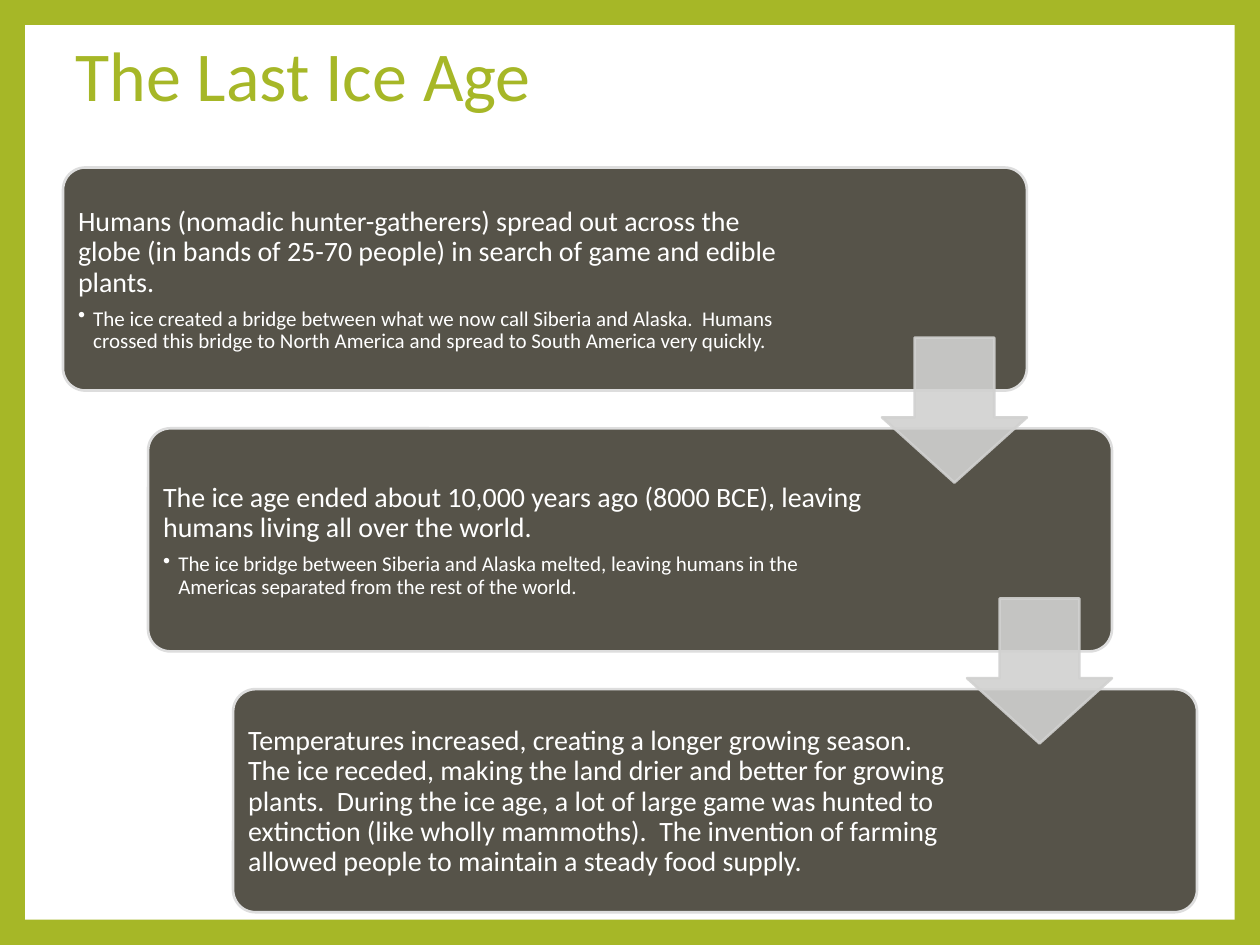
from pptx import Presentation
from pptx.dml.color import RGBColor
from pptx.enum.shapes import MSO_SHAPE as Form
from pptx.enum.text import MSO_ANCHOR as Anchor, PP_ALIGN as Align
from pptx.oxml.ns import qn
from pptx.util import Inches, Pt
from lxml.etree import SubElement

WIDE, HIGH = 10, 7.5
GREEN, WHITE, DARK, PALE, GREY = "A6B727", "FFFFFF", "565349", "DDDDDD", "D1D1D0"
LEFT, TOP = 0.5, 1.33
STEP, DROP = 0.675, 2.07
CARD_W, CARD_H, ARROW = 7.65, 1.77, 1.15

STAGES = [
    ("Humans (nomadic hunter-gatherers) spread out across the globe (in bands of 25-70 people) in search of game and edible plants.",
     "The ice created a bridge between what we now call Siberia and Alaska.  Humans crossed this bridge to North America and spread to South America very quickly."),
    ("The ice age ended about 10,000 years ago (8000 BCE), leaving humans living all over the world.",
     "The ice bridge between Siberia and Alaska melted, leaving humans in the Americas separated from the rest of the world."),
    ("Temperatures increased, creating a longer growing season.  The ice receded, making the land drier and better for growing plants.  During the ice age, a lot of large game was hunted to extinction (like wholly mammoths).  The invention of farming allowed people to maintain a steady food supply.",),
]


def paint(fill, color, alpha=None):
    fill.solid()
    fill.fore_color.rgb = RGBColor.from_string(color)
    if alpha:
        for tone in fill._xPr.iter(qn("a:srgbClr")):
            SubElement(tone, qn("a:alpha")).set("val", str(alpha * 1000))


def add_form(slide, form, box, color, edge=None, adjust=(), alpha=None):
    shape = slide.shapes.add_shape(form, *map(Inches, box))
    shape.shadow.inherit = False
    for i, value in enumerate(adjust):
        shape.adjustments[i] = value
    paint(shape.fill, color, alpha)
    if edge:
        shape.line.width = Pt(1.5)
        paint(shape.line.fill, edge, alpha)
    else:
        shape.line.fill.background()


def add_frame(slide, box, inset):
    frame = slide.shapes.add_textbox(*map(Inches, box)).text_frame
    frame.word_wrap = True
    frame.vertical_anchor = Anchor.MIDDLE
    frame.margin_left = frame.margin_right = Inches(inset)
    frame.margin_top = frame.margin_bottom = Inches(inset)
    return frame


def write(para, text, size, color, after=0):
    para.text = text
    para.alignment = Align.LEFT
    para.line_spacing = 0.9
    para.space_after = Pt(after)
    para.font.name = "Calibri"
    para.font.size = Pt(size)
    paint(para.font.fill, color)


def add_bullet(para):
    para.level = 1
    props = para._p.get_or_add_pPr()
    props.set("marL", str(Inches(0.12)))
    props.set("indent", str(Inches(-0.12)))
    mark = props.makeelement(qn("a:buChar"), {"char": "•"})
    props.find(qn("a:defRPr")).addprevious(mark)


def add_card(slide, row, lead, *notes):
    x, y = LEFT + row * STEP, TOP + row * DROP
    add_form(slide, Form.ROUNDED_RECTANGLE, (x, y, CARD_W, CARD_H), DARK, PALE, [0.1])
    frame = add_frame(slide, (x + 0.05, y + 0.06, 5.73, CARD_H - 0.1), 0.07)
    write(frame.paragraphs[0], lead, 16, WHITE, 5.6)
    for note in notes:
        para = frame.add_paragraph()
        write(para, note, 12, WHITE, 1.8)
        add_bullet(para)


def add_arrow(slide, row):
    x = LEFT + CARD_W - ARROW + row * STEP
    y = TOP + 1.35 + row * DROP
    add_form(slide, Form.DOWN_ARROW, (x, y, ARROW, ARROW), GREY, GREY, [0.55, 0.45], 90)


def main():
    deck = Presentation()
    deck.slide_width, deck.slide_height = Inches(WIDE), Inches(HIGH)
    slide = deck.slides.add_slide(deck.slide_layouts[6])
    paint(slide.background.fill, GREEN)
    add_form(slide, Form.RECTANGLE, (0.2, 0.2, WIDE - 0.4, HIGH - 0.4), WHITE)
    title = add_frame(slide, (LEFT, 0, WIDE - 2 * LEFT, HIGH / 6), 0.1)
    write(title.paragraphs[0], "The Last Ice Age", 40, GREEN)
    for row, stage in enumerate(STAGES):
        add_card(slide, row, *stage)
    for row in range(len(STAGES) - 1):
        add_arrow(slide, row)
    deck.save("out.pptx")


if __name__ == "__main__":
    main()
